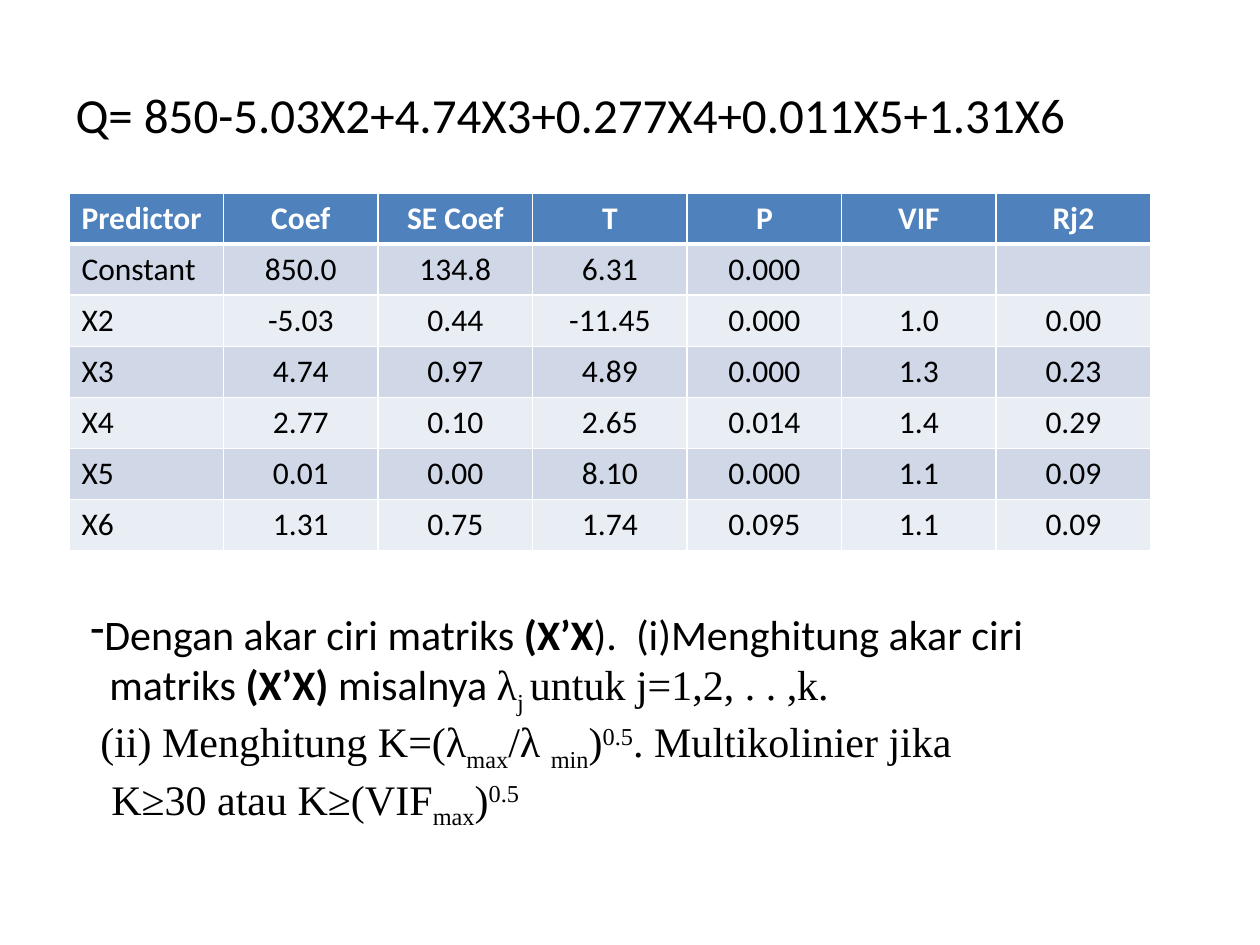
from lxml.etree import SubElement
from pptx import Presentation
from pptx.dml.color import RGBColor
from pptx.enum.text import MSO_AUTO_SIZE, PP_ALIGN
from pptx.oxml import parse_xml
from pptx.oxml.ns import nsdecls, qn
from pptx.util import Emu, Pt

PX_PER_INCH = 126
SANS, SERIF = "Calibri", "Times New Roman"
BLACK, WHITE = "000000", "FFFFFF"
HEADER_FILL = "4F81BD"
BAND_FILLS = ["D0D8E8", "E9EDF4"]
SUB, SUPER = -25, 30

EQUATION = "Q= 850-5.03X2+4.74X3+0.277X4+0.011X5+1.31X6"
ROWS = [
    ["Predictor", "Coef", "SE Coef", "T", "P", "VIF", "Rj2"],
    ["Constant", "850.0", "134.8", "6.31", "0.000", "", ""],
    ["X2", "-5.03", "0.44", "-11.45", "0.000", "1.0", "0.00"],
    ["X3", "4.74", "0.97", "4.89", "0.000", "1.3", "0.23"],
    ["X4", "2.77", "0.10", "2.65", "0.014", "1.4", "0.29"],
    ["X5", "0.01", "0.00", "8.10", "0.000", "1.1", "0.09"],
    ["X6", "1.31", "0.75", "1.74", "0.095", "1.1", "0.09"],
]
BOLD = {"bold": True}
TIMES = {"font": SERIF}
LOWER = {"font": SERIF, "baseline": SUB}
UPPER = {"font": SERIF, "baseline": SUPER}
NOTES = [
    (0, "-", [("Dengan akar ciri matriks ", {}), ("(X’X", BOLD),
              (").  (i)Menghitung akar ciri", {})]),
    (19, None, [("matriks ", {}), ("(X’X) ", BOLD), ("misalnya ", {}),
                ("λ", TIMES), ("j ", LOWER), ("untuk j=1,2, . . ,k.", TIMES)]),
    (10, None, [("(ii) Menghitung K=(λ", TIMES), ("max", LOWER), ("/λ ", TIMES),
                ("min", LOWER), (")", TIMES), ("0.5", UPPER),
                (". Multikolinier jika", TIMES)]),
    (21, None, [("K≥30 atau K≥(VIF", TIMES), ("max", LOWER), (")", TIMES),
                ("0.5", UPPER)]),
]


def px(length):
    return Emu(round(length * 914400 / PX_PER_INCH))


def colour(code):
    return RGBColor.from_string(code)


def add_span(para, text, size=24, font=SANS, color=BLACK, bold=False, baseline=0):
    span = para.add_run()
    span.text = text
    span.font.size = Pt(size)
    span.font.name = font
    span.font.bold = bold
    span.font.color.rgb = colour(color)
    if baseline:
        span.font._element.set("baseline", str(baseline * 1000))


def set_indent(para, left, first=0, bullet=None):
    properties = para._p.get_or_add_pPr()
    properties.set("marL", str(px(left)))
    properties.set("indent", str(px(first)))
    if bullet:
        SubElement(properties, qn("a:buChar")).set("char", bullet)
    else:
        SubElement(properties, qn("a:buNone"))


def set_borders(cell, **widths):
    properties = cell._tc.get_or_add_tcPr()
    for place, side in enumerate("LRTB"):
        width = Pt(widths.get(side, 1))
        properties.insert(place, parse_xml(
            f'<a:ln{side} {nsdecls("a")} w="{width}"><a:solidFill>'
            f'<a:srgbClr val="{WHITE}"/></a:solidFill></a:ln{side}>'))


def add_equation(page):
    page.shapes.title._element.getparent().remove(page.shapes.title._element)
    box = page.placeholders[1]
    box.left, box.top, box.width, box.height = map(px, (63, 78, 1134, 765))
    para = box.text_frame.paragraphs[0]
    set_indent(para, 47, first=-47)
    add_span(para, EQUATION, size=28)


def add_predictor_table(page):
    table = page.shapes.add_table(
        len(ROWS), len(ROWS[0]), *map(px, (69, 193, 1082, 357))).table
    for row, values in enumerate(ROWS):
        header = row == 0
        for column, value in enumerate(values):
            cell = table.cell(row, column)
            cell.fill.solid()
            fill = HEADER_FILL if header else BAND_FILLS[(row - 1) % 2]
            cell.fill.fore_color.rgb = colour(fill)
            set_borders(cell, B=3 if header else 1, T=3 if row == 1 else 1)
            para = cell.text_frame.paragraphs[0]
            if column:
                para.alignment = PP_ALIGN.CENTER
            if value:
                add_span(para, value, size=18, bold=header,
                         color=WHITE if header else BLACK)


def add_notes_box(page):
    frame = page.shapes.add_textbox(*map(px, (78, 602, 1063, 217))).text_frame
    frame.word_wrap = True
    frame.auto_size = MSO_AUTO_SIZE.SHAPE_TO_FIT_TEXT
    for number, (left, bullet, spans) in enumerate(NOTES):
        para = frame.add_paragraph() if number else frame.paragraphs[0]
        set_indent(para, left, bullet=bullet)
        for text, style in spans:
            add_span(para, text, **style)


def main():
    deck = Presentation()
    deck.slide_width, deck.slide_height = px(1260), px(945)
    page = deck.slides.add_slide(deck.slide_layouts[1])
    add_equation(page)
    add_predictor_table(page)
    add_notes_box(page)
    deck.save("out.pptx")


if __name__ == "__main__":
    main()
